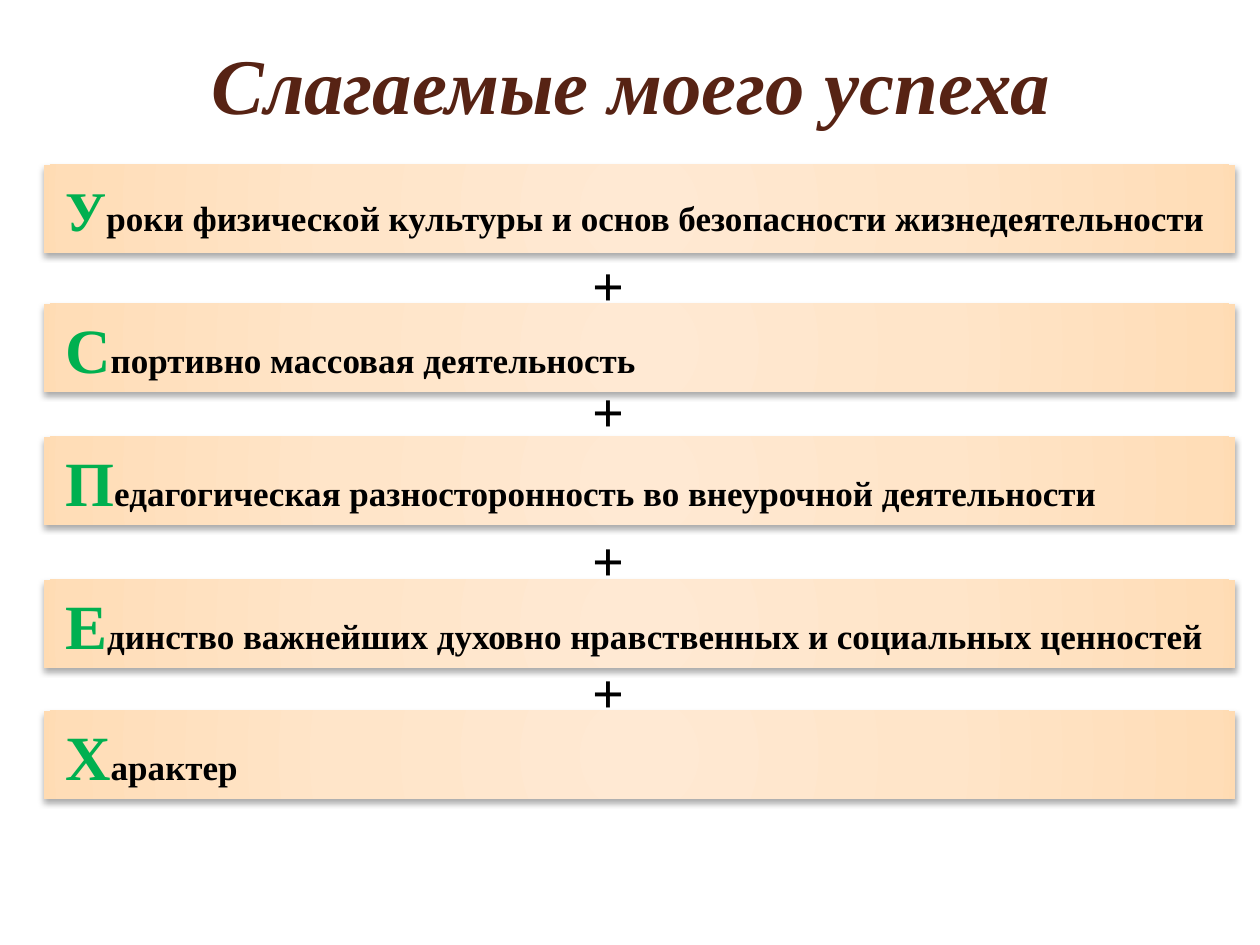
from lxml import etree
from pptx import Presentation, util as u
from pptx.dml.color import RGBColor
from pptx.enum import shapes, text
from pptx.oxml import ns

PX = 914400 / 126
FONT = "Times New Roman"
BROWN = RGBColor(0x57, 0x23, 0x14)
GREEN = RGBColor(0x00, 0xB0, 0x50)
BLACK = RGBColor(0, 0, 0)
GLOW = [(0, "FFE9D3"), (50, "FFE5C9"), (97, "FFDDB7"), (100, "FFDBB2")]
A = ns.nsdecls("a")


def px(*lengths):
    return [u.Emu(round(n * PX)) for n in lengths]


def add_run(paragraph, words, size, color):
    run = paragraph.add_run()
    run.text = words
    run.font.name = FONT
    run.font.size = u.Pt(size)
    run.font.bold = True
    run.font.color.rgb = color
    return run


prs = Presentation()
prs.slide_width, prs.slide_height = px(1260, 945)
slide = prs.slides.add_slide(prs.slide_layouts[5])

title = slide.shapes.title
title.left, title.top, title.width, title.height = px(64, 4, 1134, 158)
title.text_frame.vertical_anchor = text.MSO_ANCHOR.MIDDLE
heading = title.text_frame.paragraphs[0]
heading.alignment = text.PP_ALIGN.CENTER
add_run(heading, "Слагаемые моего успеха", 45, BROWN).font.italic = True

stops = "".join(
    f'<a:gs pos="{pos * 1000}"><a:srgbClr val="{color}"/></a:gs>' for pos, color in GLOW
)
gradient = (
    f'<a:gradFill {A} rotWithShape="1"><a:gsLst>{stops}</a:gsLst><a:path path="circle">'
    '<a:fillToRect l="50000" t="50000" r="50000" b="50000"/></a:path></a:gradFill>'
)
shadow = (
    f'<a:outerShdw {A} blurRad="{u.Pt(3.5)}" dist="{u.Pt(2.2)}" dir="5400000" rotWithShape="0">'
    '<a:srgbClr val="000000"><a:alpha val="32000"/></a:srgbClr></a:outerShdw>'
)

components = [
    (165, "У", 32, "роки физической культуры и основ безопасности жизнедеятельности"),
    (304, "С", 36, "портивно массовая деятельность"),
    (437, "П", 36, "едагогическая разносторонность во внеурочной деятельности"),
    (580, "Е", 36, "динство важнейших духовно нравственных и социальных ценностей"),
    (711, "Х", 36, "арактер"),
]
for top, initial, size, rest in components:
    bar = slide.shapes.add_shape(shapes.MSO_SHAPE.RECTANGLE, *px(44, top, 1191, 88))
    bar.fill.background()
    bar.line.fill.background()
    bar.shadow.inherit = False
    props = bar.element.spPr
    props.replace(props.find(ns.qn("a:noFill")), etree.fromstring(gradient))
    props.find(ns.qn("a:effectLst")).append(etree.fromstring(shadow))
    frame = bar.text_frame
    frame.word_wrap = True
    frame.vertical_anchor = text.MSO_ANCHOR.MIDDLE
    line = frame.paragraphs[0]
    line.alignment = text.PP_ALIGN.LEFT
    line._p.get_or_add_pPr().set("marL", str(u.Inches(0.07)))
    add_run(line, initial, size, GREEN)
    add_run(line, rest, 20, BLACK)

for top in (244, 370, 519, 651):
    plus = slide.shapes.add_textbox(*px(580, top, 78, 79))
    plus.text_frame.word_wrap = True
    add_run(plus.text_frame.paragraphs[0], "+", 32, BLACK)

prs.save("out.pptx")
